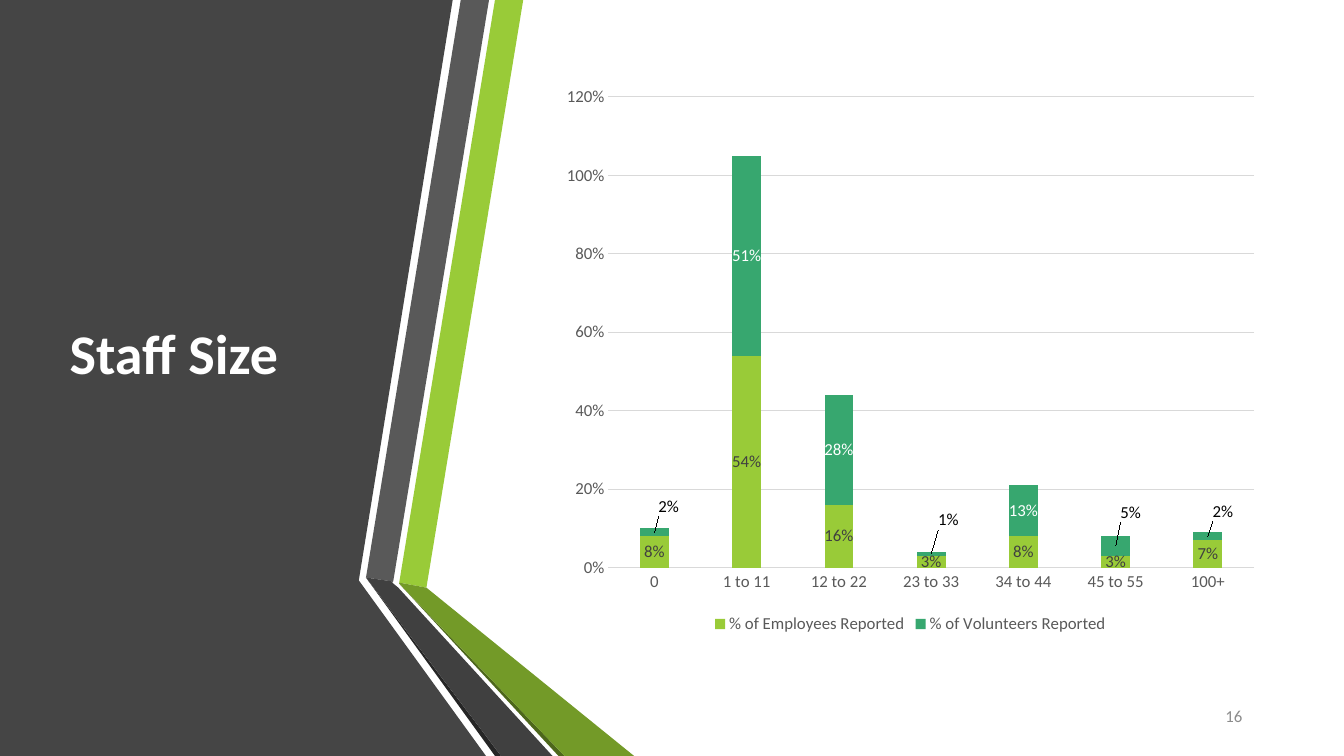
from lxml.etree import SubElement
from pptx import Presentation
from pptx.chart.data import CategoryChartData
from pptx.dml.color import RGBColor
from pptx.enum.chart import XL_CHART_TYPE, XL_LEGEND_POSITION, XL_TICK_MARK
from pptx.enum.text import MSO_ANCHOR, PP_ALIGN
from pptx.oxml.ns import qn
from pptx.util import Inches, Pt

COLORS = {
    "panel": "454545", "green": "99CB38", "gray": "595959", "black": "262626",
    "olive": "4D671B", "moss": "739A28", "charcoal": "404040", "teal": "37A76F",
    "grid": "D9D9D9", "number": "8C8C8C", "white": "FFFFFF", "label": "000000",
}

BANDS = [
    ("panel", [(0, 0), (4.49, 0), (3.56, 5.75), (3.56, 5.76), (4.82, 7.5), (0, 7.5)]),
    ("green", [(3.96, 5.78), (4.23, 5.83), (5.19, 0), (4.91, 0)]),
    ("gray", [(4.85, 0), (4.57, 0), (3.63, 5.73), (3.9, 5.77)]),
    ("black", [(3.63, 5.73), (4.91, 7.5), (4.97, 7.5)]),
    ("olive", [(3.96, 5.79), (5.54, 7.5), (5.6, 7.5)]),
    ("moss", [(3.96, 5.79), (5.6, 7.5), (6.29, 7.5), (4.23, 5.83), (3.96, 5.78)]),
    ("charcoal", [(5.48, 7.5), (3.95, 5.83), (3.89, 5.78), (3.9, 5.77),
                  (3.63, 5.73), (4.97, 7.5)]),
]

STAFF_SIZES = ["0", "1 to 11", "12 to 22", "23 to 33", "34 to 44", "45 to 55", "100+"]
EMPLOYEES = [0.08, 0.54, 0.16, 0.03, 0.08, 0.03, 0.07]
VOLUNTEERS = [0.02, 0.51, 0.28, 0.01, 0.13, 0.05, 0.02]
RAISED_LABELS = {0: (0.02, -0.045), 3: (0.024, -0.06), 5: (0.021, -0.06), 6: (0.021, -0.044)}


class StaffSlide:
    """Holds the text style and the slide being built."""

    font_name = "Calibri"

    def __init__(self, presentation):
        self.slide = presentation.slides.add_slide(presentation.slide_layouts[5])
        self.shapes = self.slide.shapes

    def color(self, name):
        return RGBColor.from_string(COLORS[name])

    def style(self, font, size, color, bold=False):
        font.name = self.font_name
        font.size = Pt(size)
        font.bold = bold
        font.color.rgb = self.color(color)

    def band(self, color, points):
        corners = [(Inches(x), Inches(y)) for x, y in points]
        builder = self.shapes.build_freeform(*corners[0])
        builder.add_line_segments(corners[1:], close=True)
        band = builder.convert_to_shape()
        band.shadow.inherit = False
        band.fill.solid()
        band.fill.fore_color.rgb = self.color(color)
        band.line.fill.background()

    def title(self, text, left, top, width, height):
        title = self.shapes.title
        title.left, title.top = Inches(left), Inches(top)
        title.width, title.height = Inches(width), Inches(height)
        title.text_frame.text = text
        title.text_frame.vertical_anchor = MSO_ANCHOR.MIDDLE
        paragraph = title.text_frame.paragraphs[0]
        paragraph.alignment = PP_ALIGN.LEFT
        paragraph.line_spacing = 0.9
        self.style(paragraph.font, 40, "white", bold=True)
        self.shapes.element.append(title.element)

    def page_number(self, text, left, top, width, height):
        number = self.shapes.add_textbox(
            Inches(left), Inches(top), Inches(width), Inches(height))
        number.text_frame.word_wrap = True
        number.text_frame.vertical_anchor = MSO_ANCHOR.MIDDLE
        number.text_frame.text = text
        paragraph = number.text_frame.paragraphs[0]
        paragraph.alignment = PP_ALIGN.RIGHT
        paragraph.space_after = Pt(6)
        self.style(paragraph.font, 12, "number")

    def stacked_chart(self, categories, series, left, top, width, height):
        data = CategoryChartData(number_format="0%")
        data.categories = categories
        for name, values in series:
            data.add_series(name, values)
        chart = self.shapes.add_chart(
            XL_CHART_TYPE.COLUMN_STACKED, Inches(left), Inches(top),
            Inches(width), Inches(height), data).chart
        chart.has_title = False
        self.style(chart.font, 10, "label")
        chart.has_legend = True
        chart.legend.position = XL_LEGEND_POSITION.BOTTOM
        chart.legend.include_in_layout = False
        self.style(chart.legend.font, 12, "gray")
        for axis in (chart.category_axis, chart.value_axis):
            axis.major_tick_mark = axis.minor_tick_mark = XL_TICK_MARK.NONE
            self.style(axis.tick_labels.font, 12, "gray")
        chart.value_axis.format.line.fill.background()
        chart.value_axis.tick_labels.number_format = "0%"
        chart.value_axis.tick_labels.number_format_is_linked = False
        for rule in (chart.category_axis.format.line,
                     chart.value_axis.major_gridlines.format.line):
            rule.color.rgb = self.color("grid")
            rule.width = Pt(0.75)
        plot = chart.plots[0]
        plot.gap_width, plot.overlap = 219, 100
        plot.vary_by_categories = False
        return plot

    def style_series(self, series, fill, label_color):
        series.format.fill.solid()
        series.format.fill.fore_color.rgb = self.color(fill)
        labels = series.data_labels
        labels.show_value = True
        labels.number_format = "0%"
        labels.number_format_is_linked = False
        self.style(labels.font, 12, label_color)

    def raise_label(self, series, index, offset):
        self.style(series.points[index].data_label.font, 12, "label")
        label = next(item for item in series.data_labels._element.findall(qn("c:dLbl"))
                     if item.find(qn("c:idx")).get("val") == str(index))
        layout = SubElement(label, qn("c:layout"))
        manual = SubElement(layout, qn("c:manualLayout"))
        for axis, distance in zip("xy", offset):
            SubElement(manual, qn(f"c:{axis}"), val=str(distance))
        number_format = SubElement(
            label, qn("c:numFmt"), formatCode="0%", sourceLinked="0")
        label.insert(1, layout)
        label.insert(2, number_format)


def main():
    presentation = Presentation()
    presentation.slide_width, presentation.slide_height = Inches(13.33), Inches(7.5)
    staff = StaffSlide(presentation)
    for color, points in BANDS:
        staff.band(color, points)
    staff.title("Staff Size", 0.59, 0.75, 3.04, 5.58)
    staff.page_number("16", 11.23, 6.9, 1.19, 0.4)
    plot = staff.stacked_chart(
        STAFF_SIZES,
        [("% of Employees Reported", EMPLOYEES), ("% of Volunteers Reported", VOLUNTEERS)],
        5.48, 0.75, 7.1, 5.58)
    employees, volunteers = plot.series
    staff.style_series(employees, "green", "charcoal")
    staff.style_series(volunteers, "teal", "white")
    for index, offset in RAISED_LABELS.items():
        staff.raise_label(volunteers, index, offset)
    presentation.save("out.pptx")


if __name__ == "__main__":
    main()
